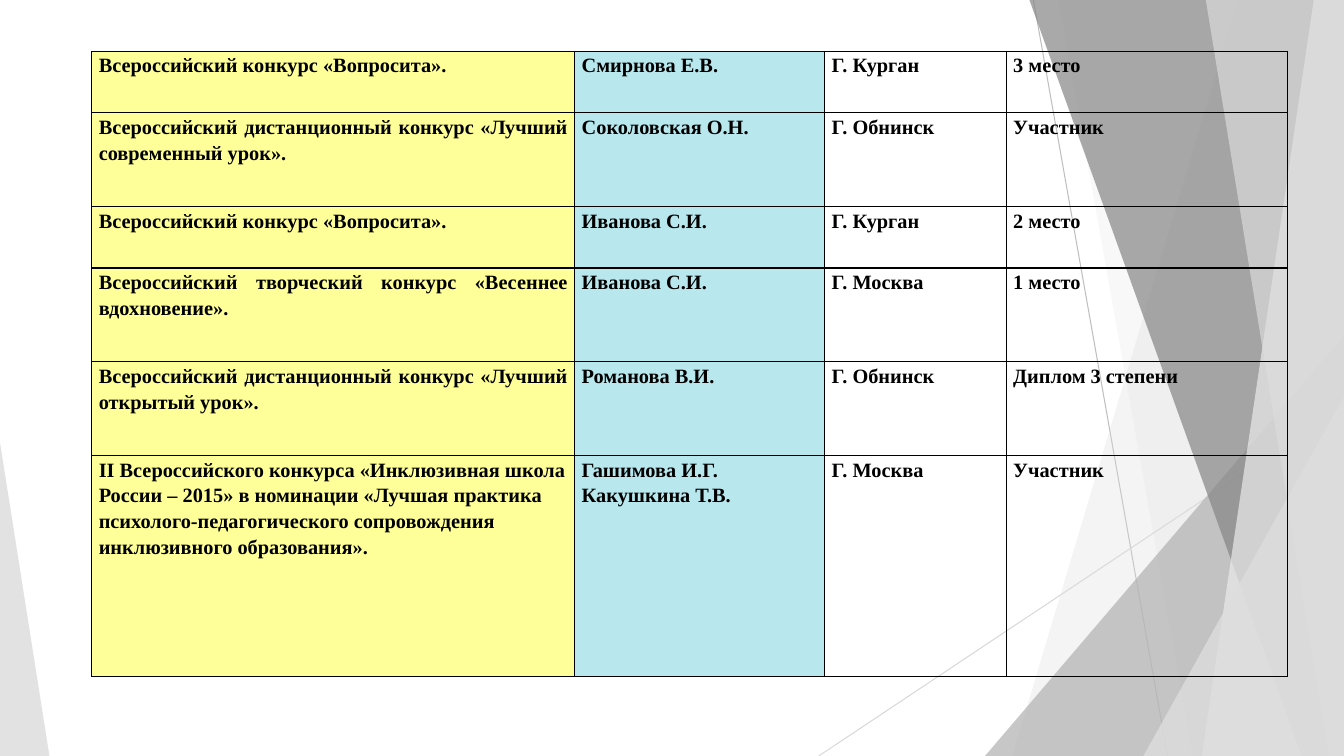
import pptx
import pptx.dml.color
import pptx.enum.shapes
import pptx.enum.text
import pptx.oxml
import pptx.oxml.ns
import pptx.util

Inches = pptx.util.Inches
Align = pptx.enum.text.PP_ALIGN
WIDTH, HEIGHT = 13.33, 7.5


def color(value):
    return pptx.dml.color.RGBColor.from_string(value)


def apply(target, values):
    for name, value in values.items():
        setattr(target, name, value)


class SlideBuilder:
    text_format = {"name": "Times New Roman", "size": pptx.util.Pt(14.5), "bold": True}
    cell_format = {"margin_left": Inches(0.07), "margin_right": Inches(0.07),
                   "margin_top": 0, "margin_bottom": 0}
    border_color = "000000"

    def __init__(self, deck):
        self.page = deck.slides.add_slide(deck.slide_layouts[6])

    def line(self, start, end, line_color):
        points = [Inches(value) for value in (*start, *end)]
        connector = self.page.shapes.add_connector(
            pptx.enum.shapes.MSO_CONNECTOR.STRAIGHT, *points)
        connector.line.color.rgb = color(line_color)
        connector.line.width = pptx.util.Pt(0.75)
        pptx.oxml.ns.qn("a:effectLst")
        connector._element.spPr.append(
            pptx.oxml.parse_xml(f'<a:effectLst {pptx.oxml.ns.nsdecls("a")}/>'))

    def paint(self, shape, fill_color, opacity):
        shape.shadow.inherit = False
        shape.fill.solid()
        shape.fill.fore_color.rgb = color(fill_color)
        shape.line.fill.background()
        tint = shape._element.spPr.find(".//" + pptx.oxml.ns.qn("a:srgbClr"))
        tint.append(pptx.oxml.parse_xml(
            f'<a:alpha {pptx.oxml.ns.nsdecls("a")} val="{opacity * 1000}"/>'))

    def band(self, top_x, bottom_x, fill_color, opacity):
        corners = [(top_x, 0), (WIDTH, 0), (WIDTH, HEIGHT), (bottom_x, HEIGHT)]
        points = [(Inches(x), Inches(y)) for x, y in corners]
        builder = self.page.shapes.build_freeform(*points[0])
        builder.add_line_segments(points[1:], close=True)
        self.paint(builder.convert_to_shape(), fill_color, opacity)

    def triangle(self, left, top, width, apex, fill_color, opacity):
        shape = self.page.shapes.add_shape(
            pptx.enum.shapes.MSO_SHAPE.ISOSCELES_TRIANGLE,
            Inches(left), Inches(top), Inches(width), Inches(HEIGHT - top))
        shape.adjustments[0] = apex
        self.paint(shape, fill_color, opacity)

    def border(self, cell):
        properties = cell._tc.get_or_add_tcPr()
        for side in ("lnL", "lnR", "lnT", "lnB"):
            properties.append(pptx.oxml.parse_xml(
                f'<a:{side} {pptx.oxml.ns.nsdecls("a")} w="12700"><a:solidFill>'
                f'<a:srgbClr val="{self.border_color}"/></a:solidFill></a:{side}>'))

    def cell(self, cell, text, fill_color, alignment):
        apply(cell, self.cell_format)
        self.border(cell)
        if fill_color:
            cell.fill.solid()
            cell.fill.fore_color.rgb = color(fill_color)
        else:
            cell.fill.background()
        cell.text = text
        for para in cell.text_frame.paragraphs:
            apply(para, {"alignment": alignment, "line_spacing": 1.15})
            for span in para.runs:
                apply(span.font, self.text_format)
                span.font.color.rgb = color("000000")

    def table(self, left, top, widths, heights, rows, fills):
        frame = self.page.shapes.add_table(
            len(rows), len(widths), Inches(left), Inches(top),
            Inches(sum(widths)), Inches(sum(heights)))
        table = frame.table
        apply(table, {"first_row": False, "horz_banding": False})
        for column, width in zip(table.columns, widths):
            column.width = Inches(width)
        for row, height in zip(table.rows, heights):
            row.height = Inches(height)
        for row_index, texts in enumerate(rows):
            for column_index, text in enumerate(texts):
                last_title = row_index == len(rows) - 1 and column_index == 0
                justified = fills[column_index] and not last_title
                self.cell(table.cell(row_index, column_index), text, fills[column_index],
                          Align.JUSTIFY if justified else Align.LEFT)


CONTESTS = [
    ("Всероссийский конкурс «Вопросита».", "Смирнова Е.В.", "Г. Курган", "3 место"),
    ("Всероссийский дистанционный конкурс «Лучший современный урок».",
     "Соколовская О.Н.", "Г. Обнинск", "Участник"),
    ("Всероссийский конкурс «Вопросита».", "Иванова С.И.", "Г. Курган", "2 место"),
    ("Всероссийский творческий конкурс «Весеннее вдохновение».",
     "Иванова С.И.", "Г. Москва", "1 место"),
    ("Всероссийский дистанционный конкурс «Лучший открытый урок».",
     "Романова В.И.", "Г. Обнинск", "Диплом 3 степени"),
    ("II Всероссийского конкурса «Инклюзивная школа России – 2015» в номинации "
     "«Лучшая практика психолого-педагогического сопровождения инклюзивного образования».",
     "Гашимова И.Г.\nКакушкина Т.В.", "Г. Москва", "Участник"),
]


def main():
    deck = pptx.Presentation()
    apply(deck, {"slide_width": Inches(WIDTH), "slide_height": Inches(HEIGHT)})
    slide = SlideBuilder(deck)
    slide.line((10.25, 0), (11.58, HEIGHT), "BFBFBF")
    slide.line((WIDTH, 4.03), (8.12, HEIGHT), "D9D9D9")
    slide.band(12.28, 10.04, "DDDDDD", 30)
    slide.band(10.5, 11.83, "DDDDDD", 20)
    slide.triangle(9.77, 3.33, 3.56, 1, "B2B2B2", 72)
    slide.band(10.21, 12.91, "858585", 70)
    slide.band(13.03, 11.92, "EBEBEB", 70)
    slide.band(11.96, 13.18, "DDDDDD", 65)
    slide.triangle(11.34, 3.93, 1.99, 1, "DDDDDD", 80)
    slide.triangle(0, 4.39, 0.49, 0, "DDDDDD", 85)
    slide.table(0.91, 0.51, [4.79, 2.48, 1.8, 2.79],
                [0.61, 0.93, 0.61, 0.93, 0.93, 2.19],
                CONTESTS, ["FFFF99", "B8E8EE", None, None])
    deck.save("out.pptx")


if __name__ == "__main__":
    main()
